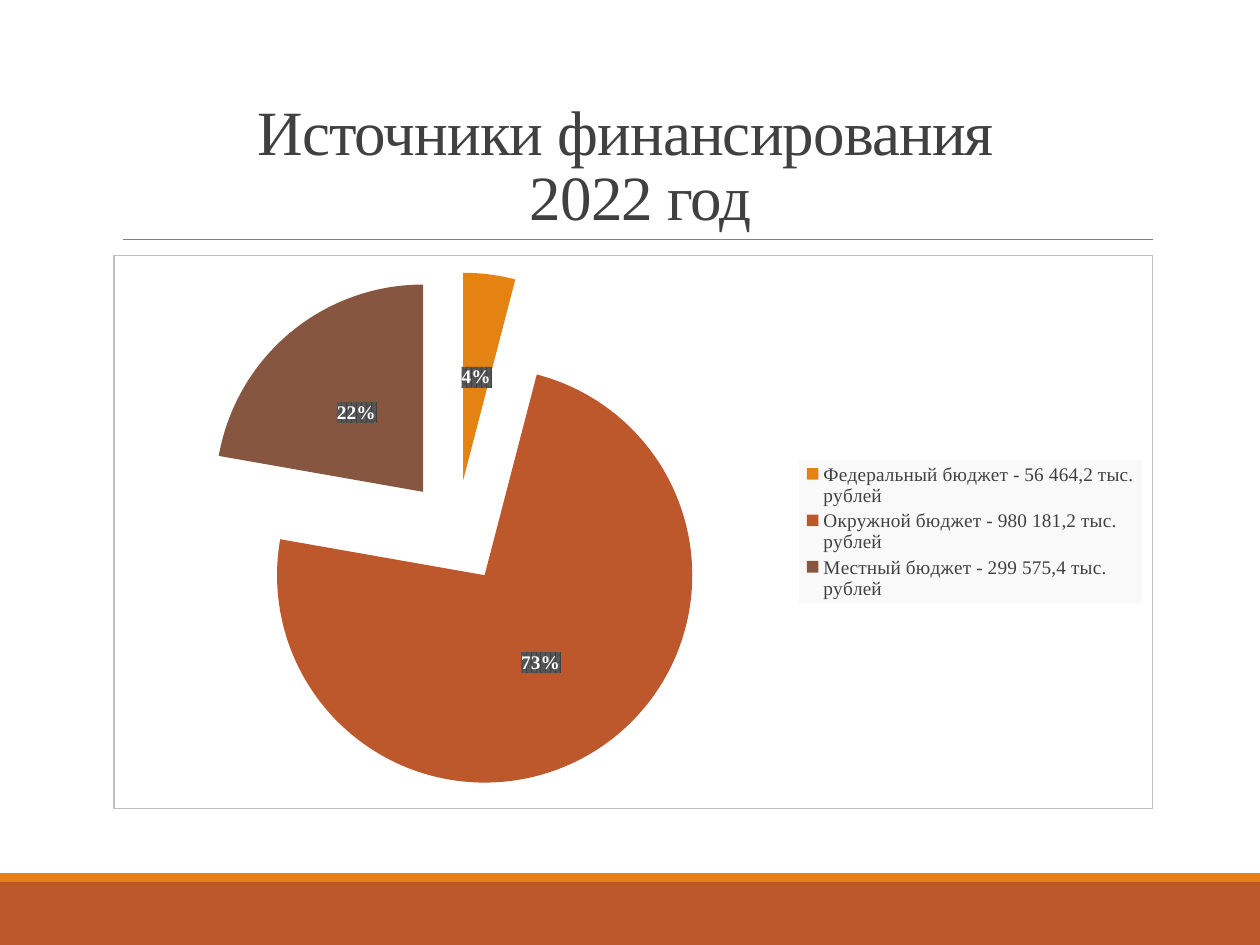
from lxml import etree
from pptx import Presentation
from pptx.chart.data import CategoryChartData
from pptx.dml.color import RGBColor
from pptx.enum.chart import XL_CHART_TYPE as ChartType
from pptx.enum.chart import XL_LABEL_POSITION as LabelPosition
from pptx.enum.chart import XL_LEGEND_POSITION as LegendPosition
from pptx.enum.shapes import MSO_CONNECTOR as Connector
from pptx.enum.shapes import MSO_SHAPE as Shape
from pptx.enum.text import MSO_ANCHOR as Anchor
from pptx.enum.text import MSO_AUTO_SIZE as AutoSize
from pptx.enum.text import PP_ALIGN as Align
from pptx.oxml import parse_xml
from pptx.oxml.ns import nsdecls, qn
from pptx.util import Inches, Pt

FONT = "Times New Roman"
COLORS = {
    "federal": "E48312", "district": "BD582C", "local": "865640",
    "text": "404040", "rule": "808080", "border": "BFBFBF",
    "legend": "F9F9F9", "label": "FFFFFF", "label_dots": "595959",
}


def chart_box(fill, line=""):
    """Return shape properties for a part of the chart."""
    return parse_xml(f'<c:spPr {nsdecls("c", "a")}>{fill}{line}</c:spPr>')


def chart_layout(x, y, w, h, inner=False):
    """Return a manual layout in fractions of the chart."""
    target = '<c:layoutTarget val="inner"/>' if inner else ""
    return parse_xml(
        f'<c:layout {nsdecls("c")}><c:manualLayout>{target}'
        '<c:xMode val="edge"/><c:yMode val="edge"/>'
        f'<c:x val="{x}"/><c:y val="{y}"/><c:w val="{w}"/><c:h val="{h}"/>'
        '</c:manualLayout></c:layout>')


prs = Presentation()
prs.slide_width, prs.slide_height = Inches(10), Inches(7.5)
slide = prs.slides.add_slide(prs.slide_layouts[5])

# Bands at the foot
for top, height, color in ((7, 0.5, "district"), (6.93, 0.07, "federal")):
    band = slide.shapes.add_shape(
        Shape.RECTANGLE, 0, Inches(top), Inches(10), Inches(height))
    band.shadow.inherit = False
    band.fill.solid()
    band.fill.fore_color.rgb = RGBColor.from_string(COLORS[color])
    band.line.fill.background()

# Rule under the title
rule = slide.shapes.add_connector(
    Connector.STRAIGHT, Inches(0.98), Inches(1.9), Inches(9.15), Inches(1.9))
rule.line.color.rgb = RGBColor.from_string(COLORS["rule"])
rule.line.width = Pt(0.5)
etree.SubElement(rule._element.spPr, qn("a:effectLst"))

# Title
title = slide.shapes.title
title.left, title.top = Inches(0.9), Inches(0.31)
title.width, title.height = Inches(8.25), Inches(1.59)
title.text_frame.text = "Источники финансирования \v 2022 год"
title.text_frame.word_wrap = True
title.text_frame.auto_size = AutoSize.NONE
title.text_frame.vertical_anchor = Anchor.BOTTOM
heading = title.text_frame.paragraphs[0]
heading.alignment = Align.CENTER
heading.line_spacing = 0.85
heading.font.name = FONT
heading.font.size = Pt(36)
heading.font.color.rgb = RGBColor.from_string(COLORS["text"])
for run in heading.runs:
    run.font._element.set("spc", "-50")

# Pie chart of the funding sources, shares in whole percent
sources = (
    ("Федеральный бюджет - 56 464,2 тыс. рублей", 4, "federal"),
    ("Окружной бюджет - 980 181,2 тыс. рублей", 73, "district"),
    ("Местный бюджет - 299 575,4 тыс. рублей", 22, "local"),
)
funding = CategoryChartData()
funding.categories = [name for name, _, _ in sources]
funding.add_series("Series 1", [share for _, share, _ in sources])
chart = slide.shapes.add_chart(
    ChartType.PIE, Inches(0.9), Inches(2.02), Inches(8.25), Inches(4.4),
    funding).chart
chart.has_title = False
chart.font.name = FONT
chart.font.size = Pt(11)
chart._chartSpace.find(qn("c:chart")).addnext(chart_box(
    "<a:noFill/>",
    f'<a:ln w="9525"><a:solidFill><a:srgbClr val="{COLORS["border"]}"/>'
    '</a:solidFill></a:ln>'))

plot_area = chart._chartSpace.chart.plotArea
for old_layout in plot_area.findall(qn("c:layout")):
    plot_area.remove(old_layout)
plot_area.insert(0, chart_layout(0.08, 0.03, 0.5, 0.94, inner=True))

# Slices, pulled apart
pie = chart.plots[0].series[0]
for index, (_, _, color) in enumerate(sources):
    slice_fill = pie.points[index].format.fill
    slice_fill.solid()
    slice_fill.fore_color.rgb = RGBColor.from_string(COLORS[color])
pie._element.find(qn("c:dPt")).addprevious(
    parse_xml(f'<c:explosion {nsdecls("c")} val="25"/>'))

# Labels on dark patterned boxes; the rounded shares add up to 99,
# so each label shows its value with a percent sign
labels = pie.data_labels
labels.show_percentage = False
labels.show_value = True
labels.number_format = '0"%"'
labels.number_format_is_linked = False
labels.position = LabelPosition.CENTER
labels.font.name = FONT
labels.font.size = Pt(11)
labels.font.bold = True
labels.font.color.rgb = RGBColor.from_string(COLORS["label"])
labels._element.find(qn("c:txPr")).addprevious(chart_box(
    '<a:pattFill prst="pct75">'
    f'<a:fgClr><a:srgbClr val="{COLORS["text"]}"/></a:fgClr>'
    f'<a:bgClr><a:srgbClr val="{COLORS["label_dots"]}"/></a:bgClr>'
    '</a:pattFill>'))

# Legend
chart.has_legend = True
legend = chart.legend
legend.position = LegendPosition.RIGHT
legend.include_in_layout = False
legend.font.name = FONT
legend.font.size = Pt(11)
legend.font.color.rgb = RGBColor.from_string(COLORS["text"])
for old_layout in legend._element.findall(qn("c:layout")):
    legend._element.remove(old_layout)
legend._element.find(qn("c:overlay")).addprevious(
    chart_layout(0.66, 0.37, 0.33, 0.26))
legend._element.find(qn("c:txPr")).addprevious(chart_box(
    f'<a:solidFill><a:srgbClr val="{COLORS["legend"]}"/></a:solidFill>'))

prs.save("out.pptx")
